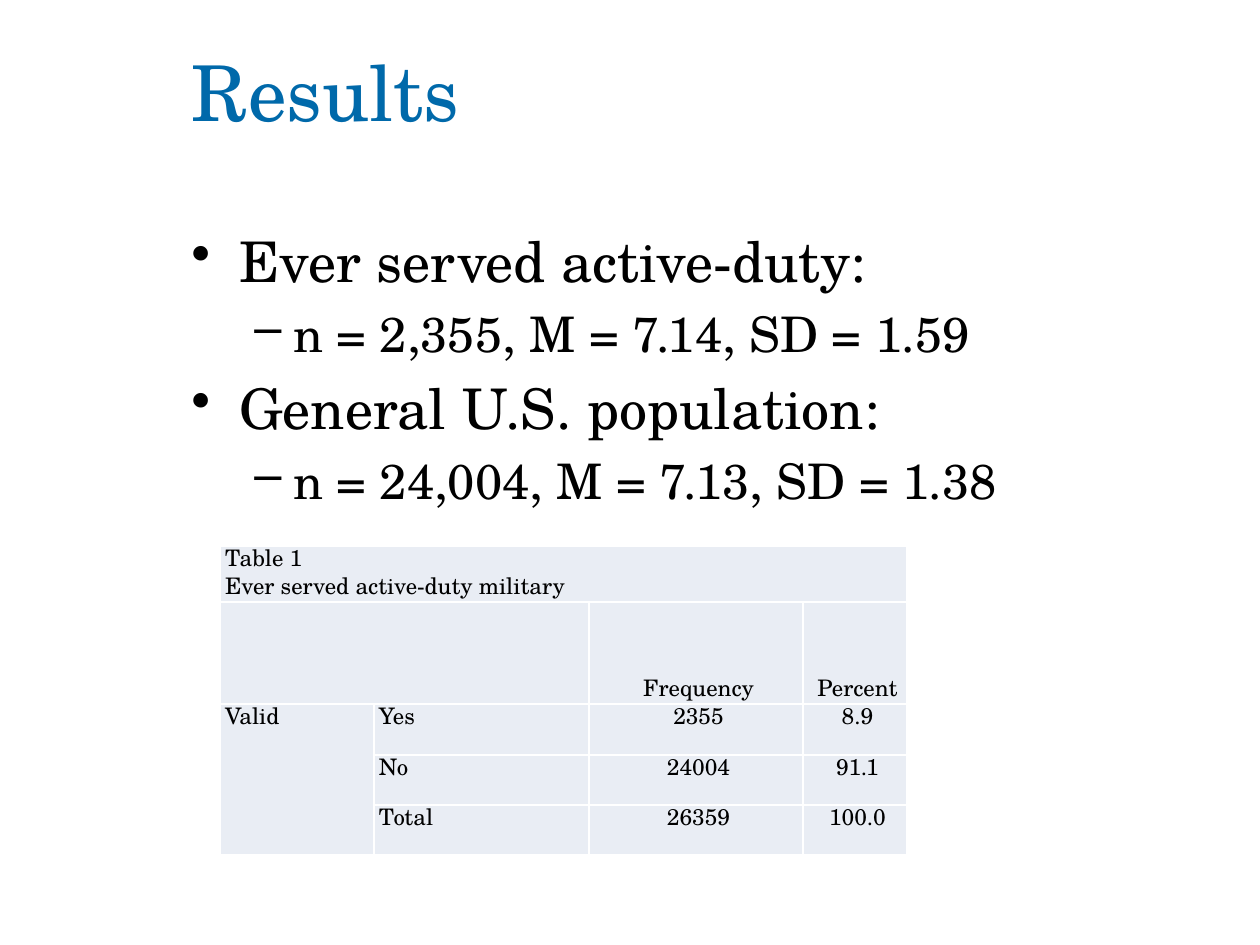
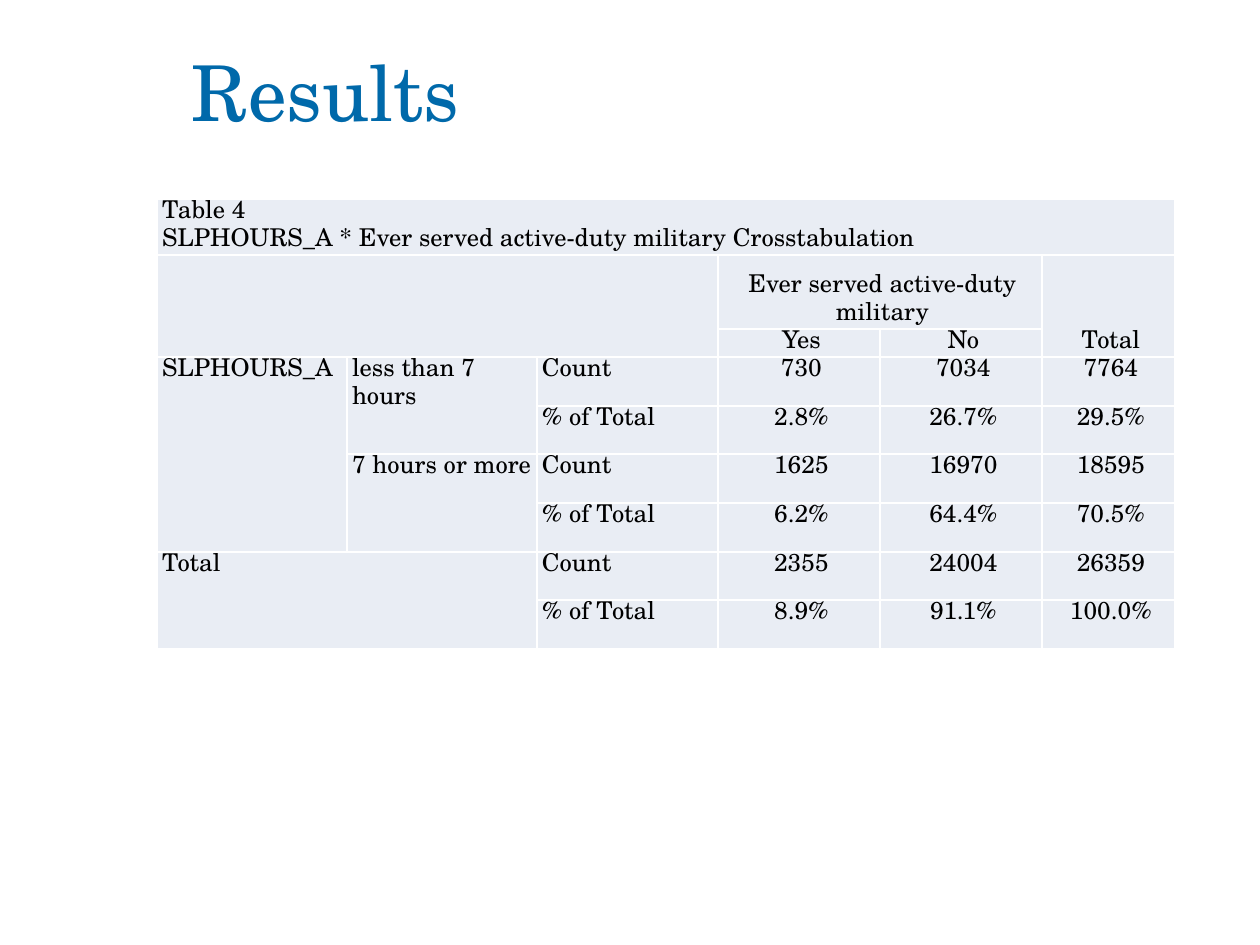
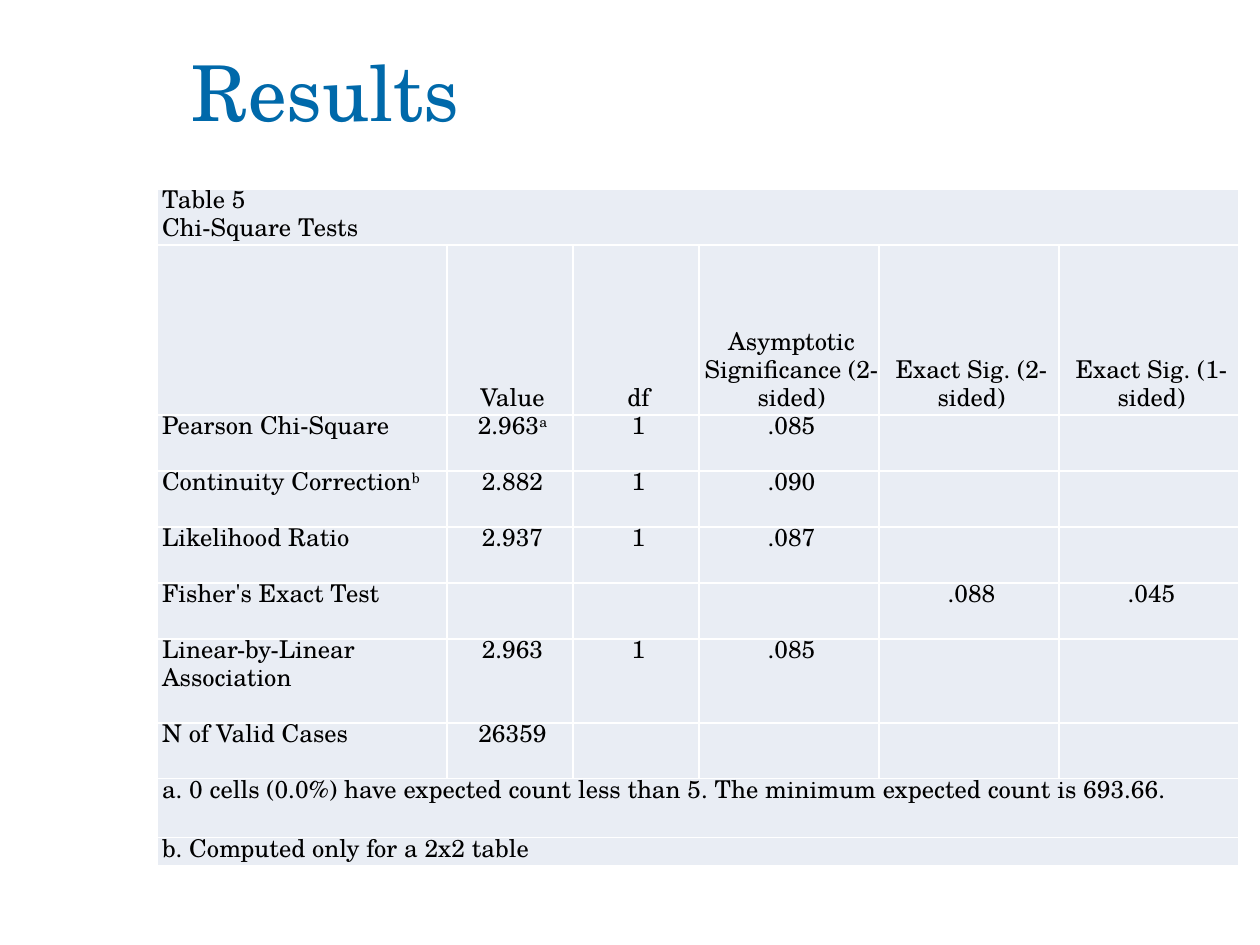
from lxml import etree
from pptx import Presentation
from pptx.dml.color import RGBColor
from pptx.enum.text import MSO_ANCHOR, PP_ALIGN
from pptx.oxml.ns import qn
from pptx.util import Emu, Pt

TOP, MIDDLE, BOTTOM = MSO_ANCHOR.TOP, MSO_ANCHOR.MIDDLE, MSO_ANCHOR.BOTTOM
LEFT, CENTER = PP_ALIGN.LEFT, PP_ALIGN.CENTER
PX = 914400 / 126
FONT = "TeX Gyre Schola"
BLUE, BLACK, WHITE, PALE = "0069AA", "000000", "FFFFFF", "E9EDF4"
BULLETS = [
    {"char": "•", "size": 32, "margin": 48, "hang": 48},
    {"char": "–", "size": 28, "margin": 102, "hang": 39},
]


def px(length):
    return Emu(round(length * PX))


def write(paragraph, text, size, color):
    for index, part in enumerate(text.split("^")):
        if not part:
            continue
        run = paragraph.add_run()
        run.text = part
        for name, value in {"name": FONT, "size": Pt(size), "bold": False}.items():
            setattr(run.font, name, value)
        run.font.color.rgb = RGBColor.from_string(color)
        if index:
            run.font._element.set("baseline", "30000")


results = [
    {
        "points": [
            (0, "Ever served active-duty:"),
            (1, "n = 2,355, M = 7.14, SD = 1.59"),
            (0, "General U.S. population:"),
            (1, "n = 24,004, M = 7.13, SD = 1.38"),
        ],
        "origin": (220, 546),
        "widths": [154, 215, 214, 104],
        "heights": [56, 102, 51, 50, 50],
        "size": 13,
        "label_columns": 2,
        "header_rows": 1,
        "merges": [(0, 0, 0, 3), (1, 0, 1, 1), (2, 0, 4, 0)],
        "rows": [
            ["Table 1\nEver served active-duty military"],
            ["", "", "Frequency", "Percent"],
            ["Valid", "Yes", "2355", "8.9"],
            ["", "No", "24004", "91.1"],
            ["", "Total", "26359", "100.0"],
        ],
    },
    {
        "points": [],
        "origin": (157, 199),
        "widths": [190, 190, 181, 162, 162, 133],
        "heights": [56, 74, 28] + [49, 48, 49] * 2,
        "size": 14,
        "label_columns": 3,
        "header_rows": 2,
        "merges": [(0, 0, 0, 5), (1, 0, 2, 2), (1, 3, 1, 4), (1, 5, 2, 5),
                   (3, 0, 6, 0), (3, 1, 4, 1), (5, 1, 6, 1), (7, 0, 8, 1)],
        "rows": [
            ["Table 4\nSLPHOURS_A * Ever served active-duty military Crosstabulation"],
            ["", "", "", "Ever served active-duty military", "", "Total"],
            ["", "", "", "Yes", "No", ""],
            ["SLPHOURS_A", "less than 7 hours", "Count", "730", "7034", "7764"],
            ["", "", "% of Total", "2.8%", "26.7%", "29.5%"],
            ["", "7 hours or more", "Count", "1625", "16970", "18595"],
            ["", "", "% of Total", "6.2%", "64.4%", "70.5%"],
            ["Total", "", "Count", "2355", "24004", "26359"],
            ["", "", "% of Total", "8.9%", "91.1%", "100.0%"],
        ],
    },
    {
        "points": [],
        "origin": (157, 189),
        "widths": [290, 126, 126, 180, 180, 180],
        "heights": [56, 170, 56, 56, 56, 56, 84, 56, 59, 28],
        "size": 14,
        "label_columns": 1,
        "header_rows": 1,
        "merges": [(0, 0, 0, 5), (8, 0, 8, 5), (9, 0, 9, 5)],
        "rows": [
            ["Table 5\nChi-Square Tests"],
            ["", "Value", "df", "Asymptotic Significance (2-sided)",
             "Exact Sig. (2-sided)", "Exact Sig. (1-sided)"],
            ["Pearson Chi-Square", "2.963^a", "1", ".085"],
            ["Continuity Correction^b", "2.882", "1", ".090"],
            ["Likelihood Ratio", "2.937", "1", ".087"],
            ["Fisher's Exact Test", "", "", "", ".088", ".045"],
            ["Linear-by-Linear Association", "2.963", "1", ".085"],
            ["N of Valid Cases", "26359"],
            ["a. 0 cells (0.0%) have expected count less than 5. "
             "The minimum expected count is 693.66."],
            ["b. Computed only for a 2x2 table"],
        ],
    },
]

prs = Presentation()
prs.slide_width, prs.slide_height = px(1260), px(945)

for result in results:
    slide = prs.slides.add_slide(prs.slide_layouts[6])
    title = slide.shapes.add_textbox(px(179), px(42), px(1040), px(98)).text_frame
    title.word_wrap = True
    title.vertical_anchor = MIDDLE
    write(title.paragraphs[0], "Results", 44, BLUE)

    if result["points"]:
        body = slide.shapes.add_textbox(px(179), px(220), px(1018), px(336)).text_frame
        body.word_wrap = True
        for index, (level, text) in enumerate(result["points"]):
            bullet = BULLETS[level]
            point = body.add_paragraph() if index else body.paragraphs[0]
            point.level = level
            if index:
                point.space_before = Pt(bullet["size"] * 0.2)
            properties = point._p.get_or_add_pPr()
            properties.set("marL", str(px(bullet["margin"])))
            properties.set("indent", str(-px(bullet["hang"])))
            etree.SubElement(properties, qn("a:buChar"), char=bullet["char"])
            write(point, text, bullet["size"], BLACK)

    widths, heights = result["widths"], result["heights"]
    left, top = result["origin"]
    table = slide.shapes.add_table(len(heights), len(widths), px(left), px(top),
                                   px(sum(widths)), px(sum(heights))).table
    table.first_row = table.horz_banding = False
    for column, width in zip(table.columns, widths):
        column.width = px(width)
    for row, height in zip(table.rows, heights):
        row.height = px(height)

    for r in range(len(heights)):
        anchor = MIDDLE if r == 0 else BOTTOM if r <= result["header_rows"] else TOP
        for c in range(len(widths)):
            cell = table.cell(r, c)
            cell_format = {"margin_left": 0, "margin_right": 0, "margin_top": 0,
                           "margin_bottom": 0, "vertical_anchor": anchor}
            for name, value in cell_format.items():
                setattr(cell, name, value)
            cell_properties = cell._tc.get_or_add_tcPr()
            for side in ("a:lnL", "a:lnR", "a:lnT", "a:lnB"):
                border = etree.SubElement(cell_properties, qn(side), w=str(Pt(1)))
                border_fill = etree.SubElement(border, qn("a:solidFill"))
                etree.SubElement(border_fill, qn("a:srgbClr"), val=WHITE)
            cell.fill.solid()
            cell.fill.fore_color.rgb = RGBColor.from_string(PALE)
            texts = result["rows"][r]
            lines = texts[c].split("\n") if c < len(texts) else [""]
            for index, text in enumerate(lines):
                frame = cell.text_frame
                line = frame.add_paragraph() if index else frame.paragraphs[0]
                line.alignment = CENTER if c >= result["label_columns"] else LEFT
                line.line_spacing = Pt(16)
                line._p.get_or_add_pPr().set("marL", str(px(5)))
                write(line, text, result["size"], BLACK)

    for first_row, first_column, last_row, last_column in result["merges"]:
        table.cell(first_row, first_column).merge(table.cell(last_row, last_column))

prs.save("out.pptx")
